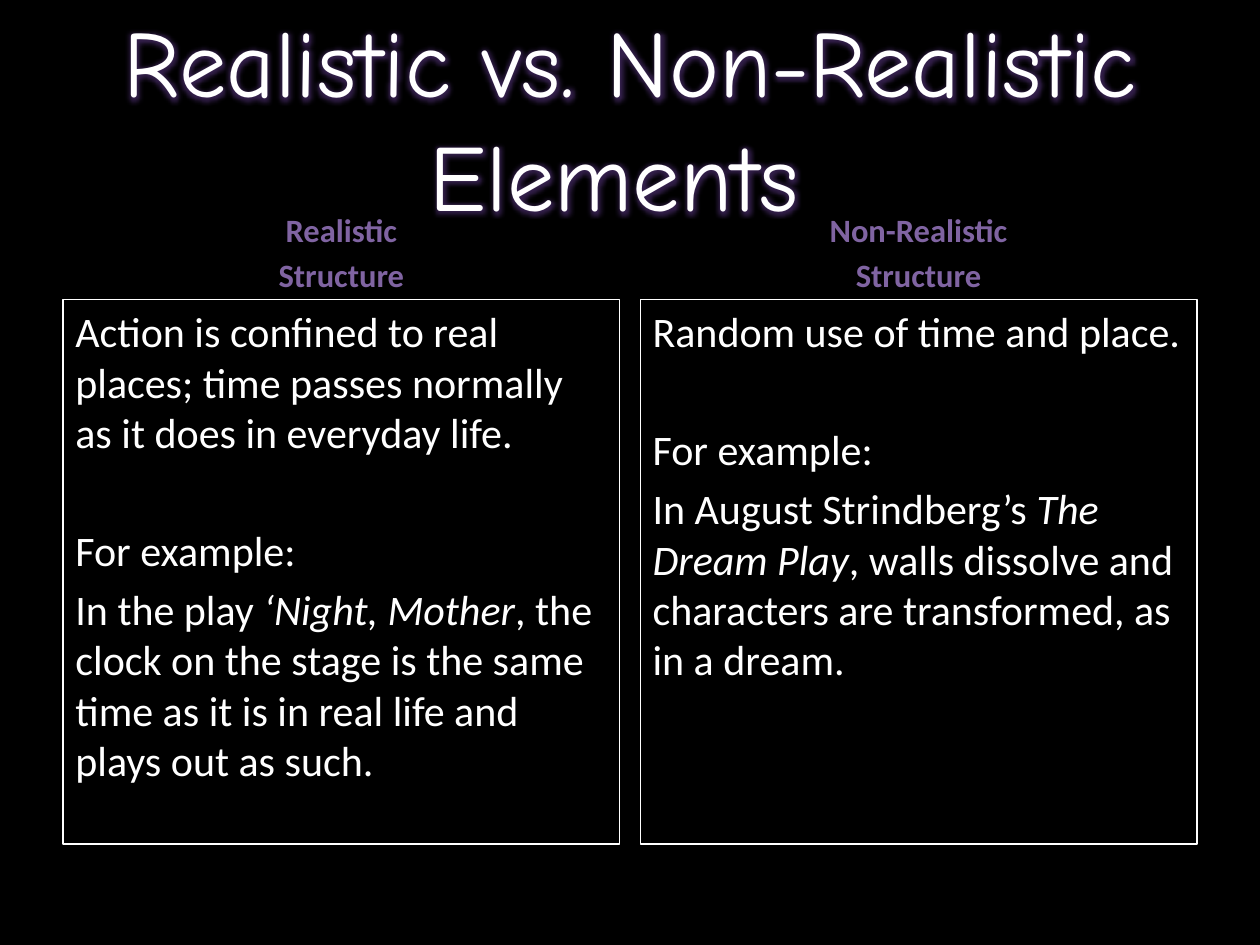
from lxml import etree
from pptx import Presentation
from pptx.dml.color import RGBColor
from pptx.enum.shapes import MSO_SHAPE
from pptx.enum.text import MSO_ANCHOR, MSO_AUTO_SIZE, PP_ALIGN
from pptx.oxml.ns import qn
from pptx.util import Pt

RECTANGLE = MSO_SHAPE.RECTANGLE
TOP, MIDDLE, BOTTOM = MSO_ANCHOR.TOP, MSO_ANCHOR.MIDDLE, MSO_ANCHOR.BOTTOM
LEFT, CENTER = PP_ALIGN.LEFT, PP_ALIGN.CENTER
NO_AUTOFIT = MSO_AUTO_SIZE.NONE

BLACK, WHITE, PURPLE, GLOW = "000000", "FFFFFF", "8064A2", "7F4DB9"
TITLE_FONT = {"name": "Comic Neue", "size": Pt(54), "bold": False}
HEADING_FONT = {"name": "Calibri", "size": Pt(18.6), "bold": True}
BODY_FONT = {"name": "Calibri", "size": Pt(24), "bold": False}

MARGIN, COLUMN_WIDTH, COLUMN_STEP = 36, 318.2, 329.8
HEADING_TOP, HEADING_HEIGHT = 120.9, 50.4
BODY_TOP, BODY_HEIGHT = 171.3, 311
HEADING_GAP, BODY_GAP, EXAMPLE_GAP = 3.2, 4.8, 38.6

COLUMNS = [
    (
        ["Realistic", "Structure"],
        "Action is confined to real places; time passes normally as it does in everyday life.",
        ["In the play ", "‘Night, Mother",
         ", the clock on the stage is the same time as it is in real life and plays out as such."],
    ),
    (
        ["Non-Realistic", "Structure"],
        "Random use of time and place.",
        ["In August Strindberg’s ", "The Dream Play",
         ", walls dissolve and characters are transformed, as in a dream."],
    ),
]


def color(hex_value):
    return RGBColor.from_string(hex_value)


def apply(target, values):
    for name, value in values.items():
        setattr(target, name, value)


def add_run(paragraph, text, font, hex_value, italic=False):
    run = paragraph.add_run()
    run.text = text
    apply(run.font, {**font, "italic": italic})
    run.font.color.rgb = color(hex_value)
    return run


def add_paragraph(frame, index, pieces, font, hex_value, alignment, gap):
    paragraph = frame.paragraphs[0] if index == 0 else frame.add_paragraph()
    apply(paragraph, {"alignment": alignment, "space_before": Pt(gap)})
    for position, piece in enumerate(pieces):
        add_run(paragraph, piece, font, hex_value, italic=position == 1)


def add_glow(run):
    fill = run.font._element.find(qn("a:solidFill"))
    effects = etree.Element(qn("a:effectLst"))
    glow = etree.SubElement(effects, qn("a:glow"), rad=str(Pt(8)))
    tint = etree.SubElement(glow, qn("a:srgbClr"), val=GLOW)
    etree.SubElement(tint, qn("a:alpha"), val="40000")
    fill.addnext(effects)


def format_title(title):
    apply(title, {"left": Pt(MARGIN), "top": Pt(21.6), "width": Pt(648), "height": Pt(90)})
    frame = title.text_frame
    apply(frame, {"word_wrap": True, "auto_size": NO_AUTOFIT, "vertical_anchor": MIDDLE})
    heading = frame.paragraphs[0]
    heading.alignment = CENTER
    add_glow(add_run(heading, "Realistic vs. Non-Realistic Elements ", TITLE_FONT, WHITE))


def add_heading(slide, left, lines):
    heading = slide.shapes.add_textbox(
        Pt(left), Pt(HEADING_TOP), Pt(COLUMN_WIDTH), Pt(HEADING_HEIGHT))
    frame = heading.text_frame
    apply(frame, {"word_wrap": True, "vertical_anchor": BOTTOM})
    for index, line in enumerate(lines):
        add_paragraph(frame, index, [line], HEADING_FONT, PURPLE, CENTER, HEADING_GAP)


def add_body(slide, left, description, example):
    body = slide.shapes.add_shape(
        RECTANGLE, Pt(left), Pt(BODY_TOP), Pt(COLUMN_WIDTH), Pt(BODY_HEIGHT))
    body.shadow.inherit = False
    body.fill.background()
    body.line.color.rgb = color(WHITE)
    body.line.width = Pt(0.75)
    frame = body.text_frame
    apply(frame, {"word_wrap": True, "vertical_anchor": TOP})
    paragraphs = [
        ([description], BODY_GAP),
        (["For example:"], EXAMPLE_GAP),
        (example, BODY_GAP),
    ]
    for index, (pieces, gap) in enumerate(paragraphs):
        add_paragraph(frame, index, pieces, BODY_FONT, WHITE, LEFT, gap)


def main():
    deck = Presentation()
    apply(deck, {"slide_width": Pt(720), "slide_height": Pt(540)})
    slide = deck.slides.add_slide(deck.slide_layouts[5])
    slide.background.fill.solid()
    slide.background.fill.fore_color.rgb = color(BLACK)
    format_title(slide.shapes.title)
    for index, (heading, description, example) in enumerate(COLUMNS):
        left = MARGIN + index * COLUMN_STEP
        add_heading(slide, left, heading)
        add_body(slide, left, description, example)
    deck.save("out.pptx")


if __name__ == "__main__":
    main()
